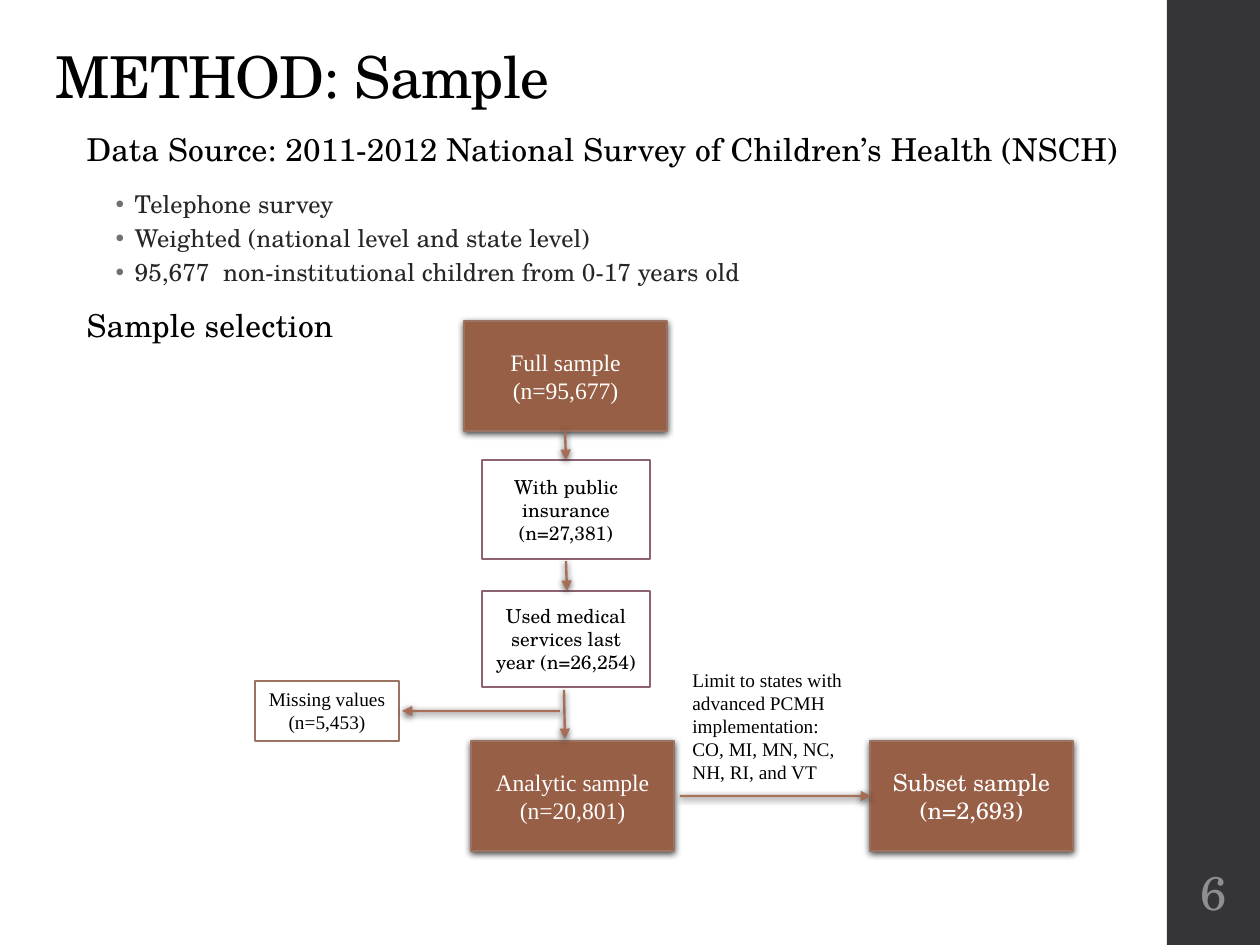
from lxml import etree
from pptx import Presentation
from pptx import util as u
from pptx.dml.color import RGBColor
from pptx.enum import shapes, text
from pptx.oxml.ns import qn

BLACK = RGBColor(0x00, 0x00, 0x00)
WHITE = RGBColor(0xFF, 0xFF, 0xFF)
INK = RGBColor(0x26, 0x26, 0x26)
BULLET = RGBColor(0x6F, 0x6F, 0x74)
NUMBER = RGBColor(0x8E, 0x8E, 0x94)
SIDEBAR = RGBColor(0x35, 0x35, 0x37)
BROWN = RGBColor(0x98, 0x5F, 0x47)
BROWN_EDGE = RGBColor(0x9B, 0x73, 0x62)
PLUM_EDGE = RGBColor(0x8D, 0x63, 0x74)
ARROW = RGBColor(0xA6, 0x6B, 0x52)

SCHOLA, TIMES = "TeX Gyre Schola", "Times New Roman"
CENTER, LEFT = text.PP_ALIGN.CENTER, text.PP_ALIGN.LEFT
TOP, MIDDLE, BOTTOM = (text.MSO_ANCHOR.TOP, text.MSO_ANCHOR.MIDDLE,
                       text.MSO_ANCHOR.BOTTOM)


def px(n):
    return u.Emu(round(n * 914400 / 126))


def sub(parent, tag, **attrs):
    el = etree.SubElement(parent, qn(tag))
    for key, value in attrs.items():
        el.set(key, str(value))
    return el


def write(p, words, font=SCHOLA, size=11, color=BLACK, align=LEFT, spacing=None,
          line=None, before=0, after=0, bullet=None, indent=(0, 0)):
    """Fill one paragraph with one formatted run."""
    r = p.add_run()
    r.text = words
    r.font.name, r.font.size = font, u.Pt(size)
    r.font.color.rgb = color
    if spacing is not None:
        r.font._element.set("spc", str(round(spacing * 100)))
    p.alignment = align
    if line:
        p.line_spacing = line
    p.space_before, p.space_after = u.Pt(before), u.Pt(after)
    pPr = p._p.get_or_add_pPr()
    pPr.set("marL", str(px(indent[0])))
    pPr.set("indent", str(px(indent[1])))
    if bullet:
        sub(sub(pPr, "a:buClr"), "a:srgbClr", val=BULLET)
        sub(pPr, "a:buFont", typeface="Arial")
        sub(pPr, "a:buChar", char=bullet)
    else:
        sub(pPr, "a:buNone")


class Deck:
    def __init__(self):
        self.prs = Presentation()
        self.prs.slide_width, self.prs.slide_height = u.Inches(10), u.Inches(7.5)
        self.s = self.prs.slides.add_slide(self.prs.slide_layouts[1])

    def fill_text(self, sp, paragraphs, anchor=TOP, inset=None, **fmt):
        """Each paragraph is a string or a (string, own format) pair."""
        tf = sp.text_frame
        tf.word_wrap, tf.auto_size = True, text.MSO_AUTO_SIZE.NONE
        tf.vertical_anchor = anchor
        if inset is not None:
            tf.margin_left = tf.margin_right = px(inset)
            tf.margin_top = tf.margin_bottom = px(inset)
        for i, item in enumerate(paragraphs):
            words, own = (item, {}) if isinstance(item, str) else item
            p = tf.paragraphs[0] if i == 0 else tf.add_paragraph()
            write(p, words, **{**fmt, **own})

    def add_shadow(self, effects):
        sh = sub(effects, "a:outerShdw", blurRad=u.Pt(4), dist=u.Pt(1.2),
                 dir=5400000, rotWithShape=0)
        sub(sub(sh, "a:srgbClr", val=BLACK), "a:alpha", val=75000)

    def placeholder(self, sp, box, paragraphs, **fmt):
        sp.left, sp.top, sp.width, sp.height = map(px, box)
        self.fill_text(sp, paragraphs, **fmt)

    def label(self, box, paragraphs, **fmt):
        self.fill_text(self.s.shapes.add_textbox(*map(px, box)), paragraphs, **fmt)

    def rect(self, box, fill, edge=None, weight=1.1, shadow=False, paragraphs=(), **fmt):
        sp = self.s.shapes.add_shape(shapes.MSO_SHAPE.RECTANGLE, *map(px, box))
        sp.fill.solid()
        sp.fill.fore_color.rgb = fill
        if edge is None:
            sp.line.fill.background()
        else:
            sp.line.color.rgb, sp.line.width = edge, u.Pt(weight)
        sp.shadow.inherit = False
        if shadow:
            self.add_shadow(sp._element.spPr.find(qn("a:effectLst")))
        self.fill_text(sp, paragraphs, align=CENTER, **fmt)

    def sample(self, x, y, *lines, font=TIMES):
        self.rect((x, y, 203, 110), BROWN, BROWN_EDGE, 0.75, True, lines,
                  anchor=MIDDLE, font=font, size=13.5, color=WHITE)

    def arrow(self, x1, y1, x2, y2):
        c = self.s.shapes.add_connector(shapes.MSO_CONNECTOR.STRAIGHT,
                                        *map(px, (x1, y1, x2, y2)))
        c.line.color.rgb, c.line.width = ARROW, u.Pt(1.35)
        spPr = c._element.spPr
        ln = spPr.find(qn("a:ln"))
        sub(ln.find(".//" + qn("a:srgbClr")), "a:alpha", val=95000)
        sub(ln, "a:tailEnd", type="triangle")
        self.add_shadow(sub(spPr, "a:effectLst"))


def main():
    d = Deck()

    # Sidebar with slide number
    d.rect((1167, 0, 94, 945), SIDEBAR)
    d.label((1167, 851, 94, 82), ["6"], anchor=MIDDLE, inset=6, size=27,
            color=NUMBER, align=CENTER)

    # Title and body
    title, body = d.s.placeholders
    d.placeholder(title, (43, 26, 663, 91), ["METHOD: Sample"], anchor=BOTTOM,
                  size=33, spacing=-0.4, line=0.9)
    heading = dict(size=18, spacing=0.1, line=0.95, before=10.5, after=1.5)
    item = dict(size=14, color=INK, spacing=0, line=0.9, before=2.2, after=2.2,
                bullet="•", indent=(48, -19))
    d.placeholder(body, (74, 126, 1071, 600), [
        ("Data Source: 2011-2012 National Survey of Children’s Health (NSCH)", heading),
        ("Telephone survey", {**item, "before": 12}),
        ("Weighted (national level and state level)", item),
        ("95,677  non-institutional children from 0-17 years old", item),
        ("Sample selection", heading),
    ])

    # Samples
    d.sample(464, 321, "Full sample", "(n=95,677)")
    d.sample(471, 741, "Analytic sample", "(n=20,801)")
    d.sample(870, 741, "Subset sample", "(n=2,693)", font=SCHOLA)

    # Selection steps
    for y, h, words in ((460, 99, "With public insurance (n=27,381)"),
                        (591, 96, "Used medical services last year (n=26,254)")):
        d.rect((482, y, 168, h), WHITE, PLUM_EDGE, paragraphs=[words], anchor=MIDDLE)
    d.rect((255, 681, 144, 60), WHITE, BROWN_EDGE, font=TIMES,
           paragraphs=["Missing values (n=5,453)"])
    d.label((680, 662, 190, 130),
            ["Limit to states with advanced PCMH implementation:",
             "CO, MI, MN, NC, NH, RI, and VT"], font=TIMES)

    # Arrows
    for ends in ((565, 430, 566, 460), (566, 561, 567, 591), (564, 690, 565, 739),
                 (560, 711, 402, 711), (680, 796, 871, 796)):
        d.arrow(*ends)

    d.prs.save("out.pptx")


if __name__ == "__main__":
    main()
